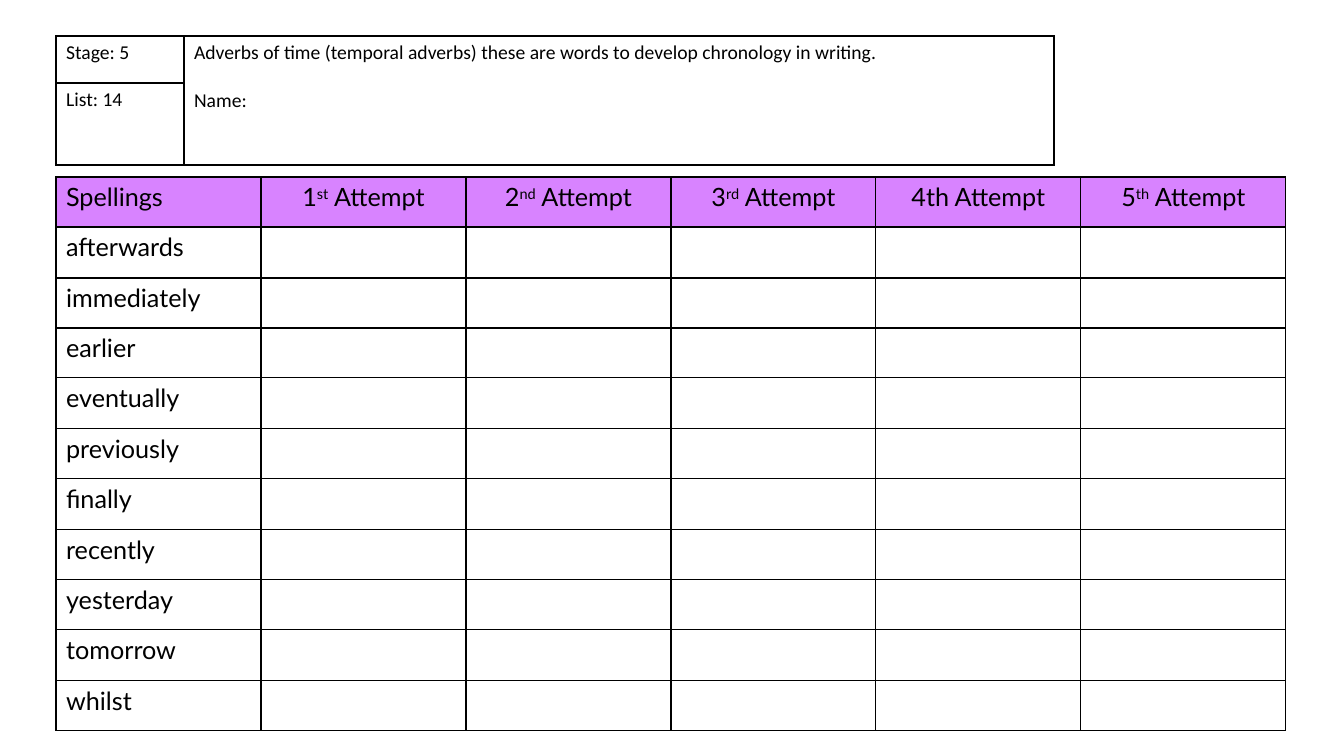
from lxml import etree
from pptx import Presentation
from pptx.dml.color import RGBColor
from pptx.enum.text import PP_ALIGN
from pptx.oxml.ns import qn
from pptx.util import Pt

CENTER = PP_ALIGN.CENTER
EMU_PER_PX = 914400 / 100.8
BLANK_LAYOUT = 6
COLORS = {"ink": "000000", "header": "D883FF"}

TABLE_LEFT = 56
SPELLINGS_TOP, SPELLINGS_HEIGHT = 177, 554
COLUMN_WIDTH = 205
LINE_HEIGHT = 17  # points, one line of 14 pt text

ATTEMPTS = [("1", "st"), ("2", "nd"), ("3", "rd"), ("4th", ""), ("5", "th")]
WORDS = [
    "afterwards", "immediately", "earlier", "eventually", "previously",
    "finally", "recently", "yesterday", "tomorrow", "whilst",
]


def px(value):
    return round(value * EMU_PER_PX)


def set_borders(cell):
    properties = cell._tc.get_or_add_tcPr()
    for side in ("a:lnL", "a:lnR", "a:lnT", "a:lnB"):
        line = etree.SubElement(properties, qn(side), w=str(Pt(1)))
        fill = etree.SubElement(line, qn("a:solidFill"))
        etree.SubElement(fill, qn("a:srgbClr"), val=COLORS["ink"])


def add_grid(slide, top, column_widths, row_heights):
    """Add a plain table with black borders and unfilled cells."""
    frame = slide.shapes.add_table(
        len(row_heights), len(column_widths), px(TABLE_LEFT), px(top),
        px(sum(column_widths)), px(sum(row_heights)))
    table = frame.table
    table.first_row = False
    table.horz_banding = False
    for column, width in zip(table.columns, column_widths):
        column.width = px(width)
    for row, height in zip(table.rows, row_heights):
        row.height = px(height)
    for cell in table.iter_cells():
        set_borders(cell)
        cell.fill.background()
    return table


def format_cell(cell, font_name, size):
    for paragraph in cell.text_frame.paragraphs:
        for run in paragraph.runs:
            run.font.name = font_name
            run.font.size = Pt(size)
            run.font.color.rgb = RGBColor.from_string(COLORS["ink"])


def write_attempt(cell, number, suffix):
    """Write an ordinal heading with its suffix raised."""
    paragraph = cell.text_frame.paragraphs[0]
    paragraph.alignment = CENTER
    if suffix:
        paragraph.add_run().text = number
        raised = paragraph.add_run()
        raised.text = suffix
        raised._r.get_or_add_rPr().set("baseline", "30000")
        paragraph.add_run().text = " Attempt"
    else:
        paragraph.add_run().text = f"{number} Attempt"


def add_list_details(slide):
    table = add_grid(slide, 36, [128, 870], [47, 82])
    topic = table.cell(0, 1)
    topic.merge(table.cell(1, 1))
    table.cell(0, 0).text_frame.text = "Stage: 5"
    table.cell(1, 0).text_frame.text = "List: 14"
    topic.text_frame.text = (
        "Adverbs of time (temporal adverbs) these are words "
        "to develop chronology in writing.")
    name = topic.text_frame.add_paragraph()
    name.text = "Name:"
    name.space_before = Pt(LINE_HEIGHT)
    for cell in table.iter_cells():
        format_cell(cell, "Calibri", 14)


def add_spellings(slide):
    row_count = len(WORDS) + 1
    edges = [round(SPELLINGS_HEIGHT * i / row_count) for i in range(row_count + 1)]
    row_heights = [bottom - top for top, bottom in zip(edges, edges[1:])]
    column_widths = [COLUMN_WIDTH] * (len(ATTEMPTS) + 1)
    table = add_grid(slide, SPELLINGS_TOP, column_widths, row_heights)
    for row, word in enumerate(["Spellings"] + WORDS):
        table.cell(row, 0).text_frame.text = word
    for column, (number, suffix) in enumerate(ATTEMPTS, start=1):
        write_attempt(table.cell(0, column), number, suffix)
    for cell in table.rows[0].cells:
        cell.fill.solid()
        cell.fill.fore_color.rgb = RGBColor.from_string(COLORS["header"])
    for cell in table.iter_cells():
        format_cell(cell, "Lato", 18)


def main():
    presentation = Presentation()
    presentation.slide_width = px(1344)
    presentation.slide_height = px(756)
    slide = presentation.slides.add_slide(presentation.slide_layouts[BLANK_LAYOUT])
    add_spellings(slide)
    add_list_details(slide)
    presentation.save("out.pptx")


if __name__ == "__main__":
    main()
